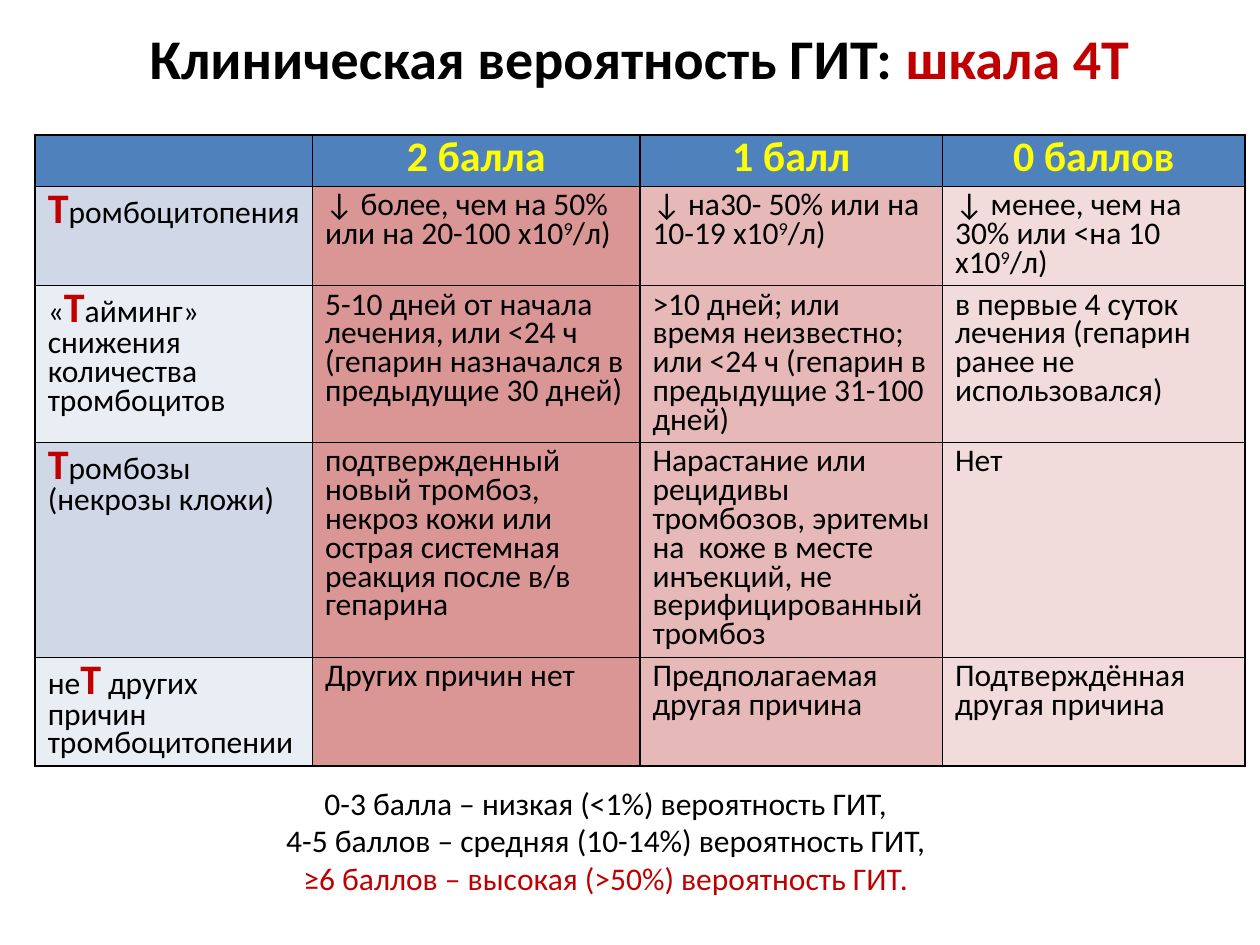
from lxml.etree import SubElement
from pptx import Presentation
from pptx.dml.color import RGBColor
from pptx.enum.text import MSO_ANCHOR, MSO_AUTO_SIZE, PP_ALIGN
from pptx.oxml.ns import qn
from pptx.util import Cm, Pt

BLACK, RED, YELLOW = "000000", "C00000", "FFFF00"
HEADER_FILL = "4F81BD"
LABEL_FILLS = ["D0D8E8", "E9EDF4"]
SCORE_FILLS = ["D99694", "E6B9B8", "F2DCDB"]


def format_run(run, size, color=BLACK, bold=False):
    run.font.name = "Calibri"
    run.font.size = Pt(size)
    run.font.bold = bold
    run.font.color.rgb = RGBColor.from_string(color)


def add_borders(cell):
    properties = cell._tc.get_or_add_tcPr()
    for side in ("lnL", "lnR", "lnT", "lnB"):
        line = SubElement(properties, qn(f"a:{side}"), w=str(Pt(1)))
        fill = SubElement(line, qn("a:solidFill"))
        SubElement(fill, qn("a:srgbClr"), val=BLACK)


presentation = Presentation()
presentation.slide_width = Cm(25.4)
presentation.slide_height = Cm(19.05)
slide = presentation.slides.add_slide(presentation.slide_layouts[1])

# Title
title = slide.shapes.title
title.left, title.top, title.width, title.height = Cm(1.09), Cm(0.33), Cm(23.6), Cm(1.63)
title.text_frame.auto_size = MSO_AUTO_SIZE.NONE
paragraph = title.text_frame.paragraphs[0]
paragraph.alignment = PP_ALIGN.CENTER
for text, color in [("Клиническая вероятность ГИТ: ", BLACK), ("шкала 4T", RED)]:
    run = paragraph.add_run()
    run.text = text
    format_run(run, 32, color, bold=True)

# Score table: bars enclose the red T of a label or the exponent of a criterion
rows = [
    ["", "2 балла", "1 балл", "0 баллов"],
    ["|Т|ромбоцитопения",
     "↓ более, чем на 50% или на 20-100 х10|9|/л)",
     "↓ на30- 50% или на 10-19 х10|9|/л)",
     "↓ менее, чем на 30% или <на 10 х10|9|/л)"],
    ["«|Т|айминг» снижения количества тромбоцитов",
     "5-10 дней от начала лечения, или <24 ч (гепарин назначался в предыдущие 30 дней)",
     ">10 дней; или время неизвестно; или <24 ч (гепарин в предыдущие 31-100 дней)",
     "в первые 4 суток лечения (гепарин ранее не использовался)"],
    ["|Т|ромбозы (некрозы кложи)",
     "подтвержденный новый тромбоз, некроз кожи или острая системная реакция после в/в гепарина",
     "Нарастание или рецидивы тромбозов, эритемы на  коже в месте инъекций, "
     "не верифицированный тромбоз",
     "Нет"],
    ["не|Т| других причин тромбоцитопении",
     "Других причин нет",
     "Предполагаемая другая причина",
     "Подтверждённая другая причина"],
]
column_widths = [5.59, 6.6, 6.1, 6.1]
row_heights = [1.04, 2, 3.14, 4.33, 2.19]

table = slide.shapes.add_table(len(rows), len(column_widths), Cm(0.71), Cm(2.72),
                               Cm(sum(column_widths)), Cm(sum(row_heights))).table
for column, width in zip(table.columns, column_widths):
    column.width = Cm(width)
for row, height in zip(table.rows, row_heights):
    row.height = Cm(height)

for row_index, texts in enumerate(rows):
    for column_index, text in enumerate(texts):
        is_header, is_label = row_index == 0, column_index == 0
        cell = table.cell(row_index, column_index)
        add_borders(cell)
        if is_header:
            color = HEADER_FILL
        elif is_label:
            color = LABEL_FILLS[(row_index - 1) % 2]
        else:
            color = SCORE_FILLS[column_index - 1]
        cell.fill.solid()
        cell.fill.fore_color.rgb = RGBColor.from_string(color)

        paragraph = cell.text_frame.paragraphs[0]
        paragraph.line_spacing = 0.75
        paragraph.alignment = PP_ALIGN.CENTER if is_header else PP_ALIGN.LEFT
        for part_index, part in enumerate(text.split("|")):
            if not part:
                continue
            run = paragraph.add_run()
            run.text = part
            is_marked = part_index % 2 == 1
            if is_header:
                format_run(run, 24, YELLOW, bold=True)
            elif is_marked and is_label:
                format_run(run, 24, RED, bold=True)
            else:
                format_run(run, 18)
                if is_marked:
                    run._r.get_or_add_rPr().set("baseline", "30000")

# Interpretation of the total score
summary = slide.placeholders[1]
summary.left, summary.top, summary.width, summary.height = Cm(0.71), Cm(15.67), Cm(23.01), Cm(2.57)
text_frame = summary.text_frame
text_frame.text = "\n".join([
    "0-3 балла – низкая (<1%) вероятность ГИТ,",
    "4-5 баллов – средняя (10-14%) вероятность ГИТ,",
    "≥6 баллов – высокая (>50%) вероятность ГИТ.",
])
text_frame.auto_size = MSO_AUTO_SIZE.NONE
text_frame.vertical_anchor = MSO_ANCHOR.TOP
for paragraph, color in zip(text_frame.paragraphs, [BLACK, BLACK, RED]):
    paragraph.alignment = PP_ALIGN.CENTER
    paragraph.space_before = Pt(0)
    properties = paragraph._p.get_or_add_pPr()
    properties.set("marL", "0")
    properties.set("indent", "0")
    SubElement(properties, qn("a:buNone"))
    format_run(paragraph.runs[0], 18, color)

presentation.save("out.pptx")
